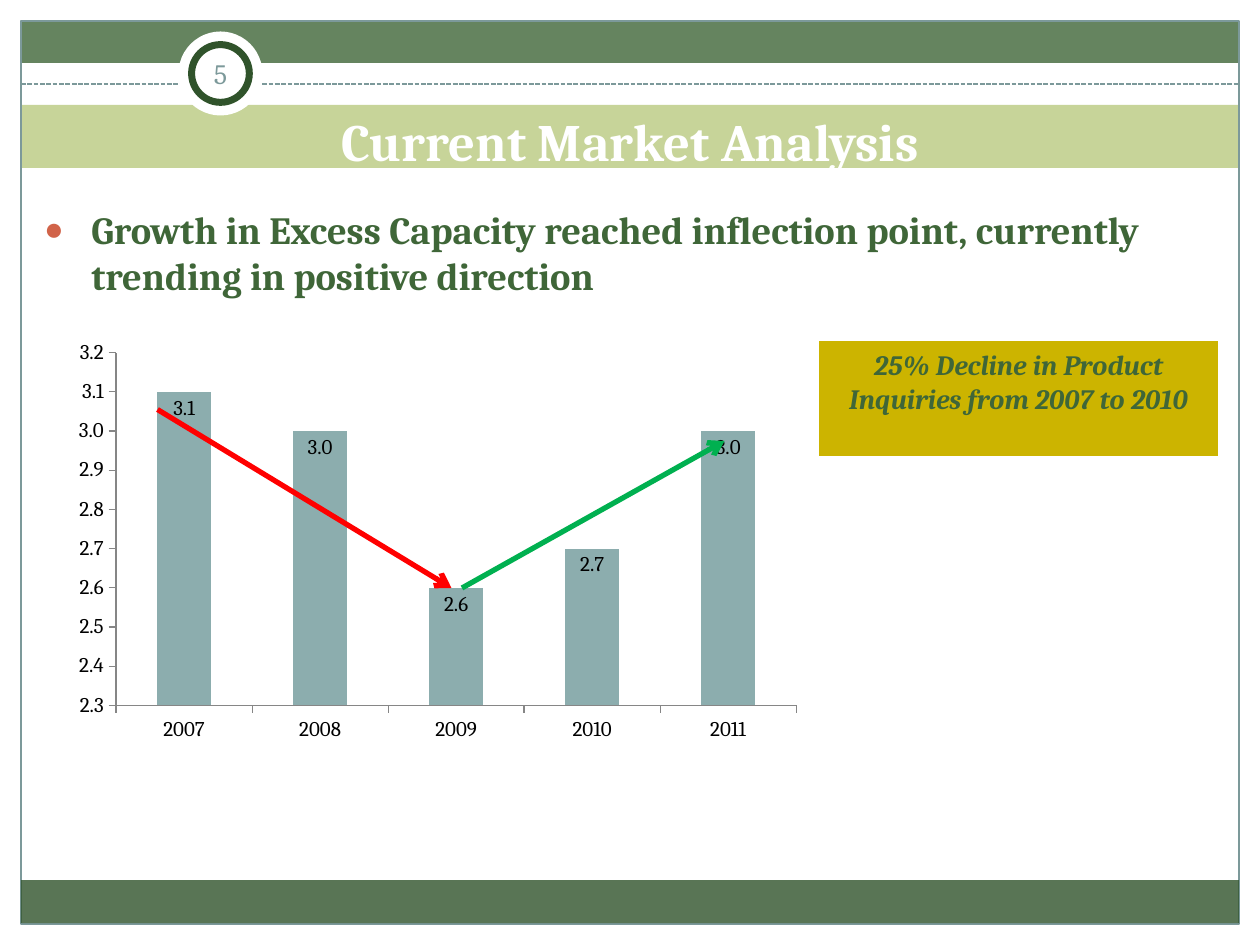
from dataclasses import dataclass

from pptx import Presentation
from pptx.chart.data import CategoryChartData
from pptx.dml.color import RGBColor
from pptx.enum.chart import XL_CHART_TYPE, XL_LABEL_POSITION, XL_TICK_MARK
from pptx.enum.dml import MSO_LINE
from pptx.enum.shapes import MSO_CONNECTOR, MSO_SHAPE
from pptx.enum.text import MSO_ANCHOR, MSO_AUTO_SIZE, PP_ALIGN
from pptx.oxml.ns import qn
from pptx.util import Pt

RECTANGLE, OVAL = MSO_SHAPE.RECTANGLE, MSO_SHAPE.OVAL
LEFT, CENTER = PP_ALIGN.LEFT, PP_ALIGN.CENTER
TOP, MIDDLE, BOTTOM = MSO_ANCHOR.TOP, MSO_ANCHOR.MIDDLE, MSO_ANCHOR.BOTTOM
DASHED = MSO_LINE.SQUARE_DOT


@dataclass(frozen=True)
class Theme:
    font: str = "Cambria"
    white: str = "FFFFFF"
    black: str = "000000"
    green: str = "3F6638"
    dark_green: str = "30532B"
    light_green: str = "B5C678"
    frame: str = "7C999A"
    bullet: str = "D16349"
    gold: str = "CCB400"
    column: str = "8CADAE"
    axis: str = "868686"
    decline: str = "FF0000"
    growth: str = "00B050"
    title_size: int = 30
    body_size: int = 22
    note_size: int = 16
    chart_size: int = 12


THEME = Theme()


def color(value):
    return RGBColor.from_string(value)


def points(*values):
    return [Pt(value) for value in values]


def place(shape, box):
    shape.left, shape.top, shape.width, shape.height = points(*box)


def format_font(font, size, value, bold=False, italic=False):
    font.name, font.size = THEME.font, Pt(size)
    font.bold, font.italic = bold, italic
    font.color.rgb = color(value)


def write_text(shape, text, *, size, value, bold=False, italic=False,
               align=LEFT, anchor=TOP):
    frame = shape.text_frame
    frame.word_wrap = True
    frame.auto_size = MSO_AUTO_SIZE.NONE
    frame.vertical_anchor = anchor
    paragraph = frame.paragraphs[0]
    paragraph.alignment = align
    paragraph.space_before = Pt(0)
    paragraph.line_spacing = 1.0
    run = paragraph.add_run()
    run.text = text
    format_font(run.font, size, value, bold, italic)
    return paragraph


def add_bullet(paragraph, indent):
    properties = paragraph._p.get_or_add_pPr()
    properties.set("marL", str(Pt(indent)))
    properties.set("indent", str(-Pt(indent)))
    bullet_color = properties.makeelement(qn("a:buClr"), {})
    rgb = properties.makeelement(qn("a:srgbClr"), {"val": THEME.bullet})
    bullet_color.append(rgb)
    properties.append(bullet_color)
    properties.append(properties.makeelement(qn("a:buSzPct"), {"val": "85000"}))
    properties.append(properties.makeelement(qn("a:buChar"), {"char": "●"}))


def add_panel(slide, box, fill=None, *, opacity=100, line=None, line_width=0.75,
              kind=RECTANGLE):
    shape = slide.shapes.add_shape(kind, *points(*box))
    shape.shadow.inherit = False
    if fill:
        shape.fill.solid()
        shape.fill.fore_color.rgb = color(fill)
    else:
        shape.fill.background()
    if opacity < 100:
        rgb = shape._element.spPr.find(".//" + qn("a:srgbClr"))
        rgb.append(rgb.makeelement(qn("a:alpha"), {"val": str(opacity * 1000)}))
    if line:
        shape.line.color.rgb = color(line)
        shape.line.width = Pt(line_width)
    else:
        shape.line.fill.background()
    return shape


def add_line(slide, start, end, value, width, *, dash=None, arrow=False):
    connector = slide.shapes.add_connector(
        MSO_CONNECTOR.STRAIGHT, *points(*start, *end))
    connector.line.color.rgb = color(value)
    connector.line.width = Pt(width)
    if dash:
        connector.line.dash_style = dash
    if arrow:
        line = connector.line._get_or_add_ln()
        line.append(line.makeelement(qn("a:tailEnd"), {"type": "arrow"}))
    properties = connector._element.spPr
    properties.append(properties.makeelement(qn("a:effectLst"), {}))


def add_column_chart(slide, box, categories, values):
    data = CategoryChartData(number_format="0.0")
    data.categories = categories
    data.add_series("Series 1", values)
    chart = slide.shapes.add_chart(
        XL_CHART_TYPE.COLUMN_CLUSTERED, *points(*box), data).chart
    chart.has_legend = chart.has_title = False
    format_font(chart.font, THEME.chart_size, THEME.black)

    for axis in (chart.category_axis, chart.value_axis):
        axis.has_major_gridlines = False
        axis.major_tick_mark = XL_TICK_MARK.OUTSIDE
        axis.minor_tick_mark = XL_TICK_MARK.NONE
        axis.format.line.color.rgb = color(THEME.axis)
    scale = chart.value_axis
    scale.minimum_scale, scale.maximum_scale, scale.major_unit = 2.3, 3.2, 0.1
    scale.tick_labels.number_format = "0.0"
    scale.tick_labels.number_format_is_linked = False

    plot = chart.plots[0]
    plot.gap_width = 150
    plot.vary_by_categories = False
    fill = plot.series[0].format.fill
    fill.solid()
    fill.fore_color.rgb = color(THEME.column)
    plot.has_data_labels = True
    labels = plot.data_labels
    labels.show_value = True
    labels.position = XL_LABEL_POSITION.INSIDE_END
    labels.number_format = "0.0"
    labels.number_format_is_linked = False


def add_background(slide):
    add_panel(slide, (12, 12, 696, 24), THEME.green, opacity=80)
    add_panel(slide, (12, 60, 696, 36), THEME.light_green, opacity=75)
    add_panel(slide, (12, 12, 696, 516), line=THEME.frame)
    add_line(slide, (12, 48), (708, 48), THEME.frame, 0.9, dash=DASHED)
    add_panel(slide, (12, 503, 696, 24.5), THEME.dark_green, opacity=80)


def add_page_badge(slide, number):
    add_panel(slide, (102, 18, 48, 48), THEME.white, kind=OVAL)
    badge = add_panel(slide, (109.5, 25.5, 33, 33), THEME.white,
                      line=THEME.dark_green, line_width=4, kind=OVAL)
    frame = badge.text_frame
    frame.margin_left = frame.margin_right = Pt(0)
    frame.margin_top = frame.margin_bottom = Pt(0)
    write_text(badge, number, size=THEME.note_size, value=THEME.frame,
               align=CENTER, anchor=MIDDLE)


def add_headings(slide, title_text, body_text):
    title, body = slide.shapes.title, slide.placeholders[1]
    place(title, (12, 66, 696, 36))
    place(body, (18, 114, 684, 60.5))
    write_text(title, title_text, size=THEME.title_size, value=THEME.white,
               bold=True, align=CENTER, anchor=BOTTOM)
    paragraph = write_text(body, body_text, size=THEME.body_size,
                           value=THEME.green, bold=True)
    add_bullet(paragraph, 27)
    # Placeholders start at the back; lift them above the bands.
    for placeholder in (title, body):
        slide.shapes._spTree.append(placeholder._element)


def main():
    presentation = Presentation()
    presentation.slide_width, presentation.slide_height = points(720, 540)
    slide = presentation.slides.add_slide(presentation.slide_layouts[1])

    add_background(slide)
    add_page_badge(slide, "5")
    add_headings(slide, "Current Market Analysis",
                 "Growth in Excess Capacity reached inflection point, "
                 "currently trending in positive direction")
    callout = add_panel(slide, (468, 195, 228, 65.5), THEME.gold)
    write_text(callout, "25% Decline in Product Inquiries from 2007 to 2010",
               size=THEME.note_size, value=THEME.green, bold=True, italic=True,
               align=CENTER)
    add_column_chart(slide, (36.5, 190, 427, 238.5),
                     ["2007", "2008", "2009", "2010", "2011"],
                     [3.1, 3.0, 2.6, 2.7, 3.0])
    add_line(slide, (90, 234), (258, 336), THEME.decline, 3, arrow=True)
    add_line(slide, (264, 336), (414, 252), THEME.growth, 3, arrow=True)

    presentation.save("out.pptx")


if __name__ == "__main__":
    main()
